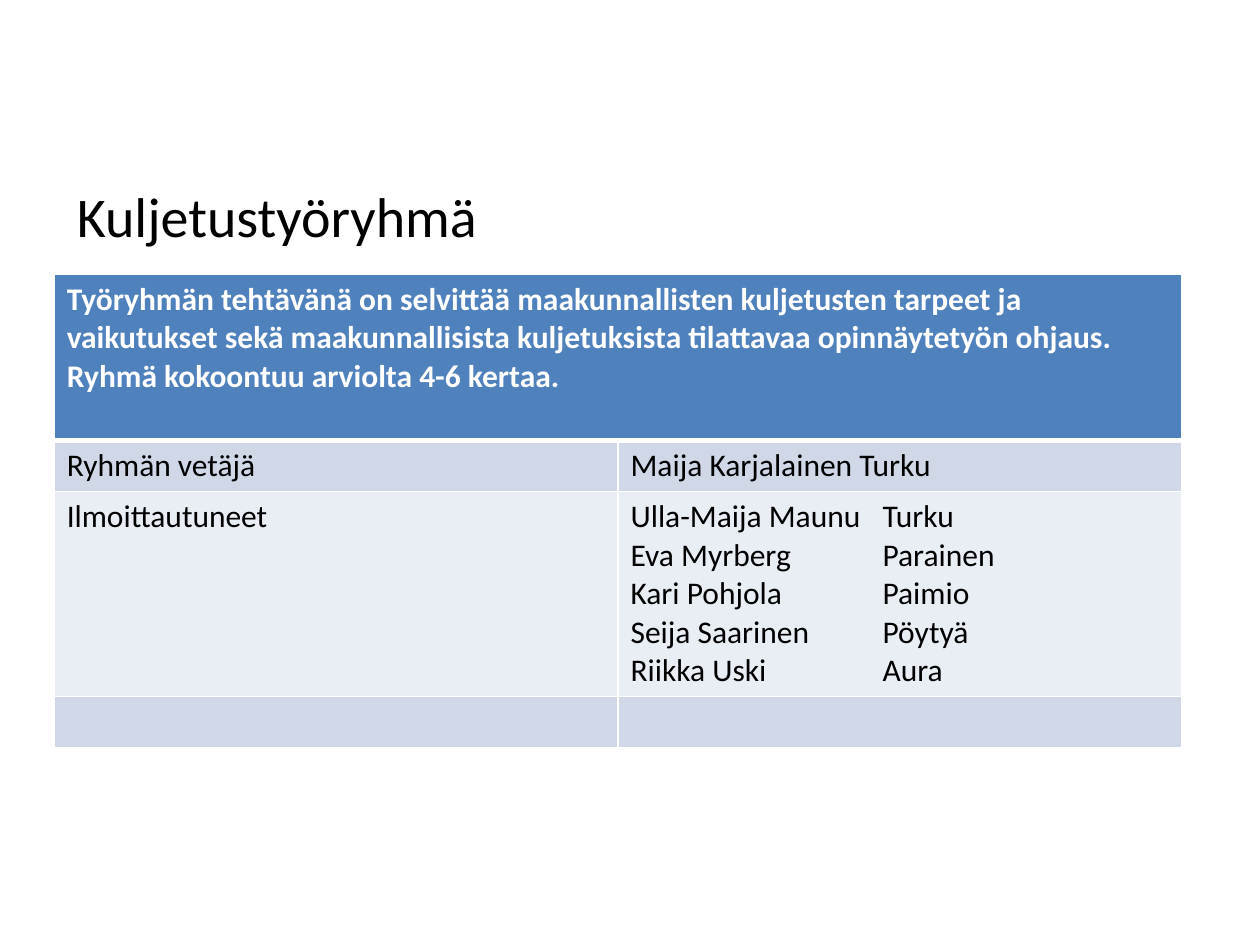
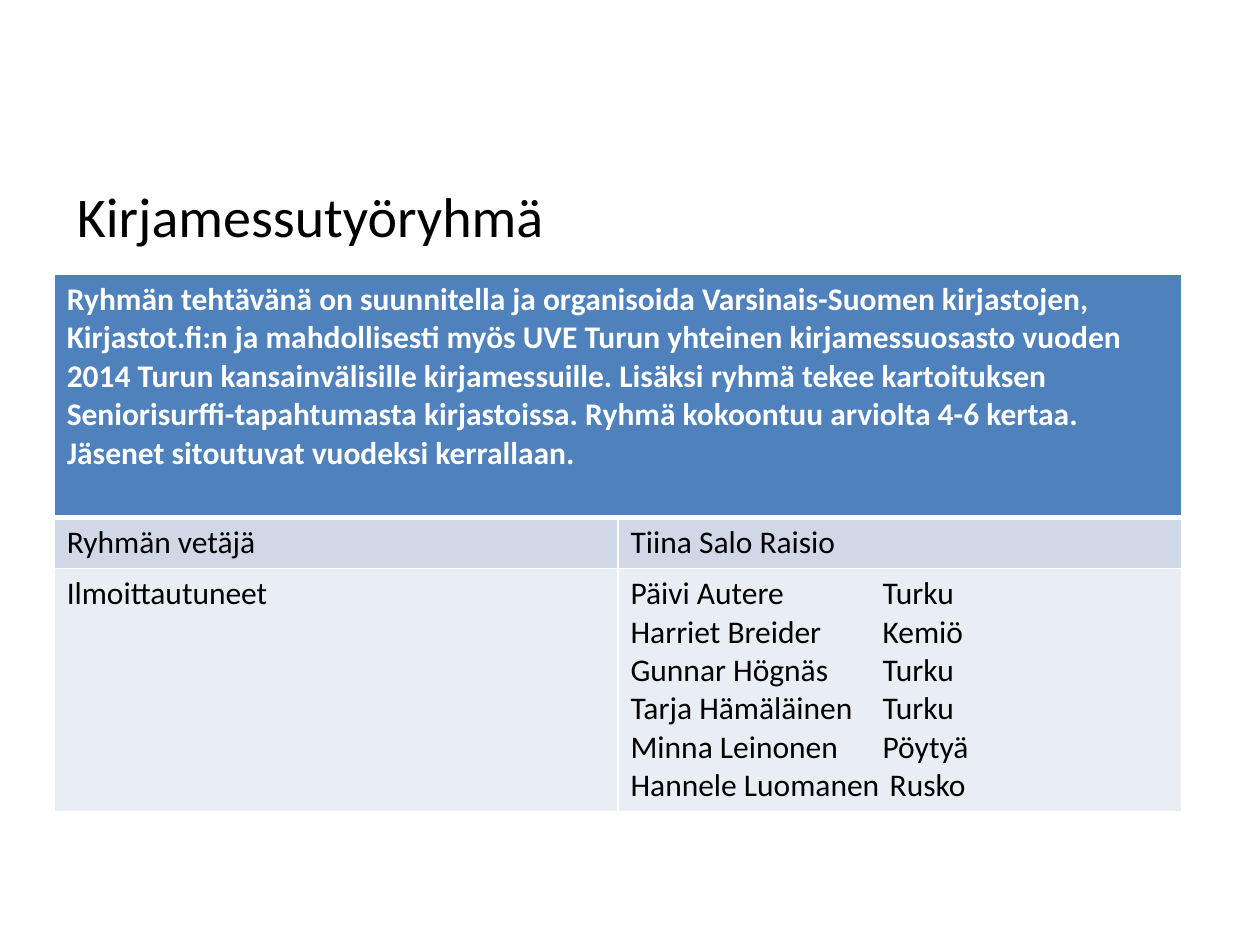
from lxml import etree
from pptx import Presentation
from pptx.dml.color import RGBColor as Rgb
from pptx.enum.text import MSO_ANCHOR as Anchor, MSO_AUTO_SIZE as AutoSize, PP_ALIGN as Align
from pptx.oxml.ns import qn
from pptx.util import Inches, Pt

# Theme: colours, type sizes and line weights
THEME = {
    "font": "Calibri",
    "title_size": Pt(32),
    "table_size": Pt(18),
    "text": Rgb.from_string("000000"),
    "white": Rgb.from_string("FFFFFF"),
    "header": Rgb.from_string("4F81BD"),
    "bands": [Rgb.from_string("D0D8E8"), Rgb.from_string("E9EDF4")],
    "thin": Pt(1),
    "thick": Pt(3),
}
TITLE_FORMAT = {"name": THEME["font"], "size": THEME["title_size"], "bold": False}
HEADER_FORMAT = {"name": THEME["font"], "size": THEME["table_size"], "bold": True}
CELL_FORMAT = HEADER_FORMAT | {"bold": False}

# Grid: frames as shares of the slide, rows by their number of text lines
WIDTH, HEIGHT = Inches(10), Inches(7.5)
TITLE_FRAME = {"left": 0.051, "top": 0.185, "width": 0.9, "height": 0.71}
TABLE_LEFT, TABLE_TOP, TABLE_WIDTH = 0.043, 0.29, 0.895
LINE_HEIGHT, ROW_PADDING = Inches(0.305), Inches(0.1)
TOWN_TAB = Inches(2)

# Content: header_lines includes one free line below the task
GROUPS = [
    {
        "title": "Kuljetustyöryhmä",
        "task": "Työryhmän tehtävänä on selvittää maakunnallisten kuljetusten tarpeet ja "
                "vaikutukset sekä maakunnallisista kuljetuksista tilattavaa opinnäytetyön "
                "ohjaus. Ryhmä kokoontuu arviolta 4-6 kertaa.",
        "header_lines": 4,
        "leader": "Maija Karjalainen Turku",
        "members": ["Ulla-Maija Maunu\tTurku", "Eva Myrberg\tParainen",
                    "Kari Pohjola\tPaimio", "Seija Saarinen\tPöytyä",
                    "Riikka Uski\tAura"],
        "spare_rows": 1,
    },
    {
        "title": "Kirjamessutyöryhmä",
        "task": "Ryhmän tehtävänä on suunnitella ja organisoida Varsinais-Suomen kirjastojen, "
                "Kirjastot.fi:n ja mahdollisesti myös UVE Turun yhteinen kirjamessuosasto "
                "vuoden 2014 Turun kansainvälisille kirjamessuille. Lisäksi ryhmä tekee "
                "kartoituksen Seniorisurffi-tapahtumasta kirjastoissa. Ryhmä kokoontuu "
                "arviolta 4-6 kertaa. Jäsenet sitoutuvat vuodeksi kerrallaan.",
        "header_lines": 6,
        "leader": "Tiina Salo Raisio",
        "members": ["Päivi Autere\tTurku", "Harriet Breider\tKemiö",
                    "Gunnar Högnäs\tTurku", "Tarja Hämäläinen\tTurku",
                    "Minna Leinonen\tPöytyä", "Hannele Luomanen\t Rusko"],
        "spare_rows": 0,
    },
]


def write_lines(frame, lines, font_format, color):
    """Fill a text frame with one paragraph per line."""
    for index, line in enumerate(lines):
        para = frame.add_paragraph() if index else frame.paragraphs[0]
        para.alignment = Align.LEFT
        if "\t" in line:
            tabs = etree.SubElement(para._p.get_or_add_pPr(), qn("a:tabLst"))
            etree.SubElement(tabs, qn("a:tab"), pos=str(TOWN_TAB), algn="l")
        span = para.add_run()
        span.text = line
        for name, value in font_format.items():
            setattr(span.font, name, value)
        span.font.color.rgb = color


def style_cell(cell, fill, top, bottom):
    """Draw white borders, then fill the cell."""
    borders = {"lnL": THEME["thin"], "lnR": THEME["thin"], "lnT": top, "lnB": bottom}
    for side, weight in borders.items():
        line = etree.SubElement(cell._tc.get_or_add_tcPr(), qn(f"a:{side}"), w=str(weight))
        solid = etree.SubElement(line, qn("a:solidFill"))
        etree.SubElement(solid, qn("a:srgbClr"), val=str(THEME["white"]))
    cell.fill.solid()
    cell.fill.fore_color.rgb = fill


deck = Presentation()
deck.slide_width, deck.slide_height = WIDTH, HEIGHT
title_only = deck.slide_layouts.get_by_name("Title Only")

for group in GROUPS:
    page = deck.slides.add_slide(title_only)

    # Title
    title = page.shapes.title
    for side, share in TITLE_FRAME.items():
        setattr(title, side, int(share * (WIDTH if side in ("left", "width") else HEIGHT)))
    title.text_frame.auto_size = AutoSize.NONE
    title.text_frame.vertical_anchor = Anchor.TOP
    write_lines(title.text_frame, [group["title"]], TITLE_FORMAT, THEME["text"])

    # Table rows and their heights
    rows = [
        [[group["task"]], []],
        [["Ryhmän vetäjä"], [group["leader"]]],
        [["Ilmoittautuneet"], group["members"]],
    ] + [[[], []]] * group["spare_rows"]
    line_counts = [group["header_lines"], 1, len(group["members"])] + [1] * group["spare_rows"]
    heights = [count * LINE_HEIGHT + ROW_PADDING for count in line_counts]

    table = page.shapes.add_table(
        len(rows), 2, int(TABLE_LEFT * WIDTH), int(TABLE_TOP * HEIGHT),
        int(TABLE_WIDTH * WIDTH), sum(heights)).table
    table.cell(0, 0).merge(table.cell(0, 1))

    # Header and banded cells
    for row_index, (row, height) in enumerate(zip(rows, heights)):
        table.rows[row_index].height = height
        is_header = row_index == 0
        fill = THEME["header"] if is_header else THEME["bands"][(row_index - 1) % 2]
        top = THEME["thick"] if row_index == 1 else THEME["thin"]
        bottom = THEME["thick"] if is_header else THEME["thin"]
        for column_index, lines in enumerate(row):
            cell = table.cell(row_index, column_index)
            style_cell(cell, fill, top, bottom)
            write_lines(cell.text_frame, lines,
                        HEADER_FORMAT if is_header else CELL_FORMAT,
                        THEME["white"] if is_header else THEME["text"])

deck.save("out.pptx")
